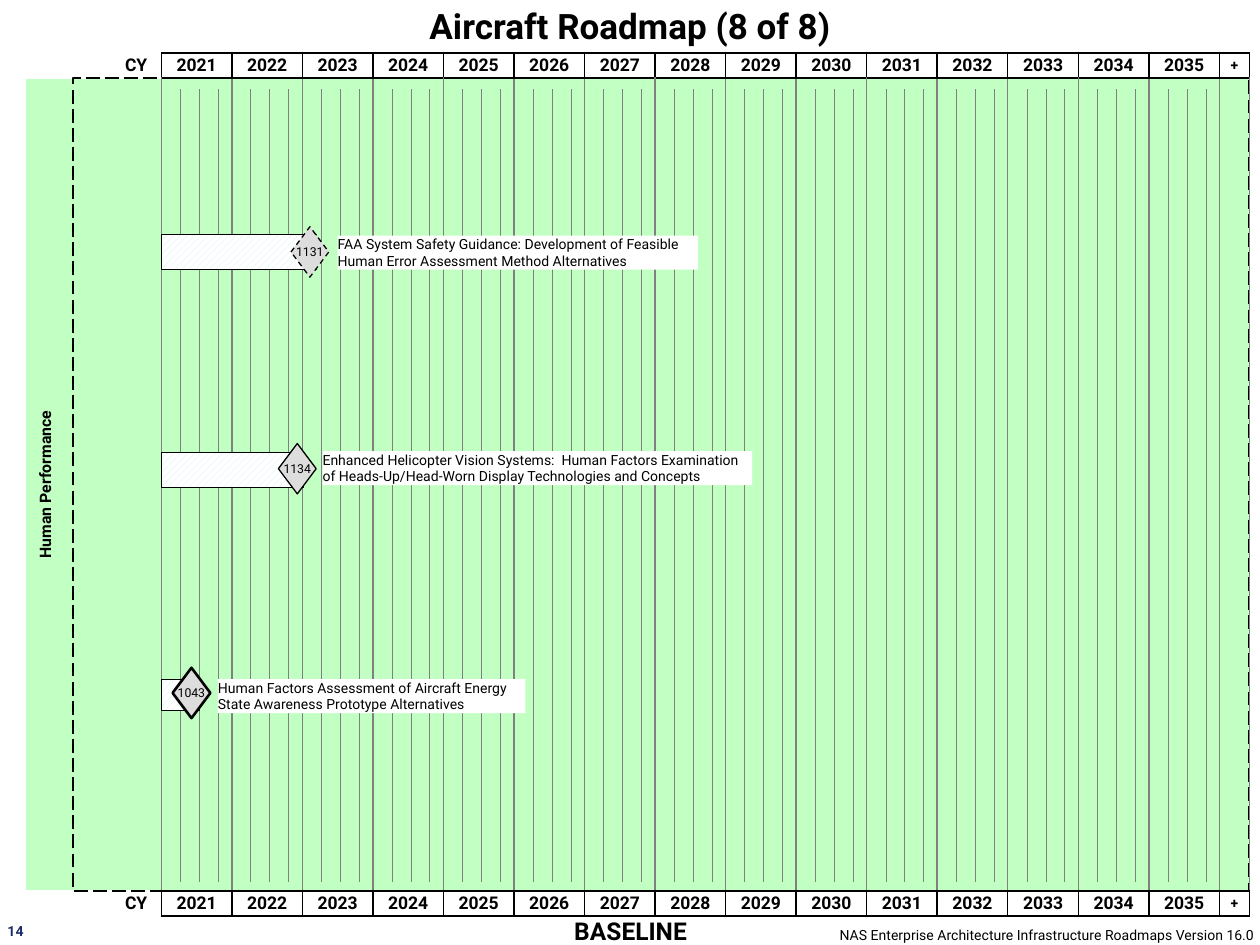
from dataclasses import dataclass

from lxml import etree
from pptx import Presentation
from pptx.dml.color import RGBColor
from pptx.enum.dml import MSO_LINE, MSO_PATTERN
from pptx.enum.shapes import MSO_CONNECTOR, MSO_SHAPE
from pptx.enum.text import MSO_ANCHOR, PP_ALIGN
from pptx.oxml.ns import qn
from pptx.util import Inches, Pt

LEFT, CENTER, RIGHT = PP_ALIGN.LEFT, PP_ALIGN.CENTER, PP_ALIGN.RIGHT
TOP, MIDDLE = MSO_ANCHOR.TOP, MSO_ANCHOR.MIDDLE
RECT, DIAMOND = MSO_SHAPE.RECTANGLE, MSO_SHAPE.DIAMOND
DASH, LONG_DASH, DOTS = MSO_LINE.DASH, MSO_LINE.LONG_DASH, MSO_LINE.ROUND_DOT
HATCH = MSO_PATTERN.WIDE_UPWARD_DIAGONAL


@dataclass
class Theme:
    font: str = "Roboto"
    black: RGBColor = RGBColor(0, 0, 0)
    white: RGBColor = RGBColor(255, 255, 255)
    gray: RGBColor = RGBColor(0x80, 0x80, 0x80)
    green: RGBColor = RGBColor(0xC2, 0xFF, 0xC2)
    hatch: RGBColor = RGBColor(0xD0, 0xF2, 0xFC)
    marker: RGBColor = RGBColor(0xDD, 0xDD, 0xDD)
    navy: RGBColor = RGBColor(0x1D, 0x2F, 0x68)
    title: float = 20
    baseline: float = 14
    year: float = 10
    band: float = 9
    small: float = 8
    code: float = 7


theme = Theme()


def write(tf, text, size, align=CENTER, bold=False, color=theme.black,
          anchor=TOP, wrap=True):
    """Fill a text frame with one paragraph, without margins."""
    tf.margin_left = tf.margin_right = tf.margin_top = tf.margin_bottom = 0
    tf.word_wrap = wrap
    tf.vertical_anchor = anchor
    tf.text = text
    p = tf.paragraphs[0]
    p.alignment = align
    font = p.runs[0].font
    font.name, font.size, font.bold = theme.font, Pt(size), bold
    font.color.rgb = color


def add_box(kind, left, top, width, height, fill=None, line=None, dash=None):
    """Add a shape; without a line width it has no outline."""
    sp = s.shapes.add_shape(kind, Inches(left), Inches(top), Inches(width), Inches(height))
    sp.shadow.inherit = False
    if fill is None:
        sp.fill.background()
    else:
        sp.fill.solid()
        sp.fill.fore_color.rgb = fill
    if line is None:
        sp.line.fill.background()
    else:
        sp.line.color.rgb = theme.black
        sp.line.width = Pt(line)
        if dash:
            sp.line.dash_style = dash
    return sp


prs = Presentation()
prs.slide_width, prs.slide_height = Inches(10), Inches(7.5)
s = prs.slides.add_slide(prs.slide_layouts[6])

# Calendar table
GRID_LEFT, YEAR_W = 1.28, 0.56
YEARS = range(2021, 2036)
labels = ["CY", *map(str, YEARS), "+"]
widths = [1.08] + [YEAR_W] * len(YEARS) + [0.23]
heights = [0.2, 6.45, 0.2]
table = s.shapes.add_table(len(heights), len(widths), Inches(0.2), Inches(0.42),
                           Inches(sum(widths)), Inches(sum(heights))).table
table.first_row = table.horz_banding = False
for col, width in zip(table.columns, widths):
    col.width = Inches(width)
for row, height in zip(table.rows, heights):
    row.height = Inches(height)

for i in range(len(heights)):
    for j, label in enumerate(labels):
        cell = table.cell(i, j)
        body, first = i == 1, j == 0
        side = theme.gray if body else theme.black
        edge = theme.white if first else theme.black
        borders = {"a:lnL": theme.white if first else side, "a:lnR": side,
                   "a:lnT": edge, "a:lnB": edge}
        tcPr = cell._tc.get_or_add_tcPr()
        for tag, color in borders.items():
            ln = etree.SubElement(tcPr, qn(tag), w=str(Pt(1)))
            solid = etree.SubElement(ln, qn("a:solidFill"))
            etree.SubElement(solid, qn("a:srgbClr"), val=str(color))
        cell.fill.solid()
        cell.fill.fore_color.rgb = theme.green if body else theme.white
        if not body:
            write(cell.text_frame, label, theme.small if label == "+" else theme.year,
                  bold=True)
            cell.vertical_anchor = MIDDLE
            cell.margin_left = Inches(0.68 if first else 0)
            cell.margin_right = cell.margin_top = cell.margin_bottom = 0

# Dotted quarter lines
for year in range(len(YEARS)):
    for quarter in (1, 2, 3):
        x = Inches(GRID_LEFT + YEAR_W * year + 0.15 * quarter)
        cx = s.shapes.add_connector(MSO_CONNECTOR.STRAIGHT, x, Inches(0.71), x, Inches(6.99))
        cx.line.color.rgb = theme.gray
        cx.line.width = Pt(0.25)
        cx.line.dash_style = DOTS
        etree.SubElement(cx._element.spPr, qn("a:effectLst"))

# Title, footer, page number and band label
texts = [
    ((0, 0, 10, 0.4), "Aircraft Roadmap (8 of 8)", theme.title,
     dict(bold=True, anchor=MIDDLE)),
    ((6.3, 7.35, 3.66, 0.13),
     "NAS Enterprise Architecture Infrastructure Roadmaps Version 16.0", theme.small,
     dict(align=RIGHT)),
    ((4.23, 7.27, 1.55, 0.24), "BASELINE", theme.baseline, dict(bold=True, anchor=MIDDLE)),
    ((0.06, 7.32, 0.14, 0.13), "14", theme.small,
     dict(align=LEFT, bold=True, color=theme.navy, wrap=False)),
    ((-1.1, 3.77, 2.91, 0.15), "Human Performance", theme.band, dict(bold=True)),
]
for place, text, size, style in texts:
    sp = s.shapes.add_textbox(*map(Inches, place))
    write(sp.text_frame, text, size, **style)
sp.rotation = 270  # the band label comes last

# Dashed frame around the band
add_box(RECT, 0.58, 0.62, 9.33, 6.45, line=1, dash=LONG_DASH)

# Activities: bar (top, width, height), diamond (left, top, line, dash),
# note (left, top, width)
activities = [
    ((1.86, 1.23, 0.28), "1131", (2.31, 1.8, 0.75, DASH), (2.68, 1.87, 2.86),
     "FAA System Safety Guidance: Development of Feasible "
     "Human Error Assessment Method Alternatives"),
    ((3.59, 1.13, 0.28), "1134", (2.21, 3.52, 0.75, None), (2.56, 3.58, 3.41),
     "Enhanced Helicopter Vision Systems:  Human Factors Examination "
     "of Heads-Up/Head-Worn Display Technologies and Concepts"),
    ((5.39, 0.3, 0.25), "1043", (1.37, 5.3, 1.5, None), (1.73, 5.39, 2.44),
     "Human Factors Assessment of Aircraft Energy "
     "State Awareness Prototype Alternatives"),
]
for (top, width, height), code, (x, y, line, dash), note, text in activities:
    bar = add_box(RECT, GRID_LEFT, top, width, height, line=0.75)
    bar.fill.patterned()
    bar.fill.pattern = HATCH
    bar.fill.fore_color.rgb = theme.hatch
    bar.fill.back_color.rgb = theme.white

    sp = add_box(RECT, *note, 0.27, fill=theme.white)
    write(sp.text_frame, text, theme.small, align=LEFT)

    sp = add_box(DIAMOND, x, y, 0.3, 0.4, fill=theme.marker, line=line, dash=dash)
    write(sp.text_frame, code, theme.code, anchor=MIDDLE, wrap=False)

prs.save("out.pptx")
